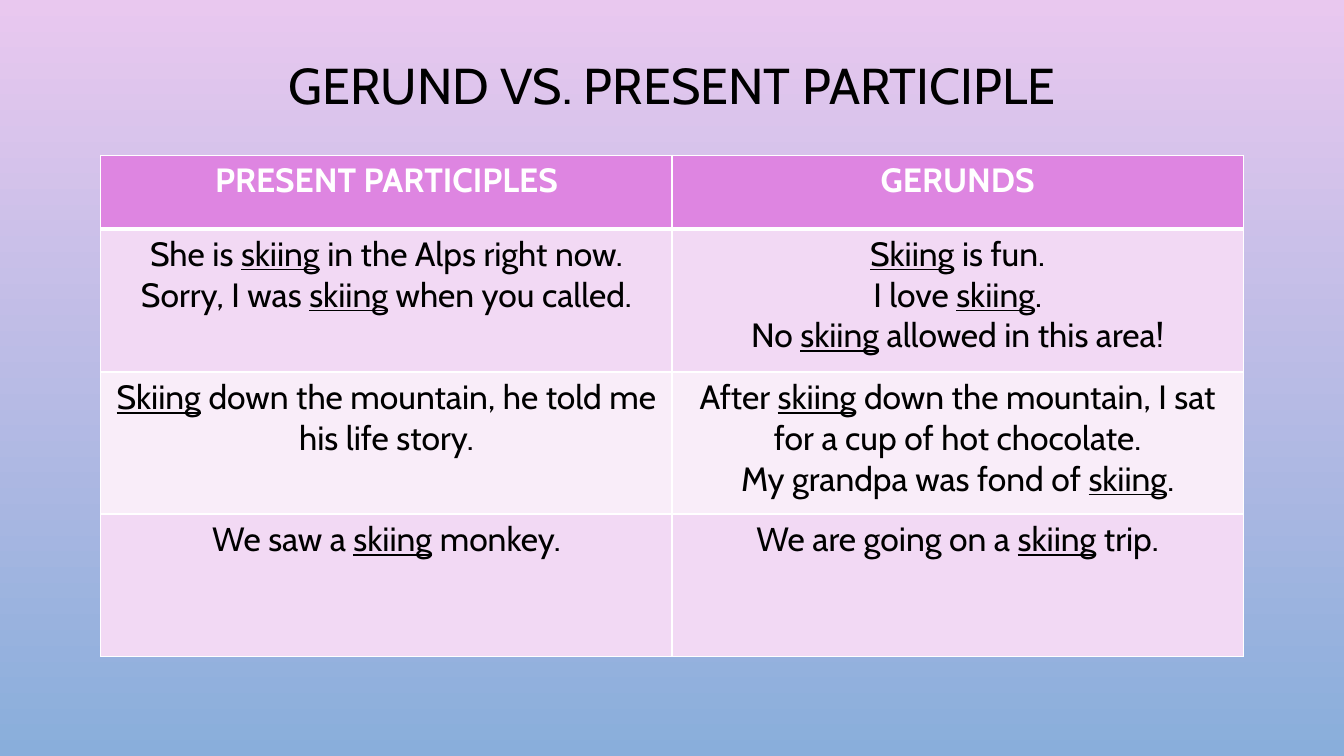
from pptx import Presentation
from pptx.dml.color import RGBColor
from pptx.enum import text
from pptx.oxml import parse_xml
from pptx.oxml.ns import nsdecls
from pptx.util import Inches, Pt

TITLE = "GERUND VS. PRESENT PARTICIPLE"
ROWS = [
    (["PRESENT PARTICIPLES"], ["GERUNDS"]),
    (["She is _skiing_ in the Alps right now.", "Sorry, I was _skiing_ when you called."],
     ["_Skiing_ is fun.", "I love _skiing_.", "No _skiing_ allowed in this area!"]),
    (["_Skiing_ down the mountain, he told me his life story."],
     ["After _skiing_ down the mountain, I sat for a cup of hot chocolate.",
      "My grandpa was fond of _skiing_."]),
    (["We saw a _skiing_ monkey."], ["We are going on a _skiing_ trip."]),
]
ROW_HEIGHTS = [0.73, 1.42, 1.41, 1.41]
ROW_FILLS = ["DE85E1", "F2D9F4", "F9EDF9", "F2D9F4"]
BACKGROUND = ["E9C8EF", "89AEDB"]
LEFT, WIDTH, TABLE_TOP = 1, 11.33, 1.54
FONT = "Cabin"


def rgb(value):
    return RGBColor.from_string(value)


def style(font, size, color, bold=False):
    font.name, font.size, font.bold = FONT, Pt(size), bold
    font.color.rgb = rgb(color)


def set_borders(cell, widths):
    for side, width in zip("LRTB", widths):
        cell._tc.get_or_add_tcPr().append(parse_xml(
            f'<a:ln{side} {nsdecls("a")} w="{Pt(width)}"><a:solidFill>'
            f'<a:srgbClr val="FFFFFF"/></a:solidFill></a:ln{side}>'))


def fill_cell(cell, lines, header):
    tf = cell.text_frame
    for i, line in enumerate(lines):
        p = tf.paragraphs[0] if i == 0 else tf.add_paragraph()
        p.alignment = text.PP_ALIGN.CENTER
        for j, part in enumerate(line.split("_")):
            if part:
                r = p.add_run()
                r.text = part
                style(r.font, 24, "FFFFFF" if header else "000000", header)
                r.font.underline = j % 2 == 1


def main():
    prs = Presentation()
    prs.slide_width, prs.slide_height = Inches(13.33), Inches(7.5)
    s = prs.slides.add_slide(prs.slide_layouts[5])
    fill = s.background.fill
    fill.gradient()
    fill.gradient_angle = 270
    for stop, color in zip(fill.gradient_stops, BACKGROUND):
        stop.color.rgb = rgb(color)

    title = s.shapes.title
    title.left, title.top = Inches(LEFT), Inches(0)
    title.width, title.height = Inches(WIDTH), Inches(1.75)
    tf = title.text_frame
    tf.text = TITLE
    tf.vertical_anchor = text.MSO_ANCHOR.MIDDLE
    p = tf.paragraphs[0]
    p.alignment, p.line_spacing = text.PP_ALIGN.CENTER, 0.9
    style(p.runs[0].font, 36, "000000")

    table = s.shapes.add_table(len(ROWS), 2, Inches(LEFT), Inches(TABLE_TOP),
                               Inches(WIDTH), Inches(sum(ROW_HEIGHTS))).table
    for i, row in enumerate(ROWS):
        table.rows[i].height = Inches(ROW_HEIGHTS[i])
        for j, lines in enumerate(row):
            cell = table.cell(i, j)
            set_borders(cell, (1, 1, 3 if i == 1 else 1, 3 if i == 0 else 1))
            cell.fill.solid()
            cell.fill.fore_color.rgb = rgb(ROW_FILLS[i])
            fill_cell(cell, lines, i == 0)
    prs.save("out.pptx")


if __name__ == "__main__":
    main()
